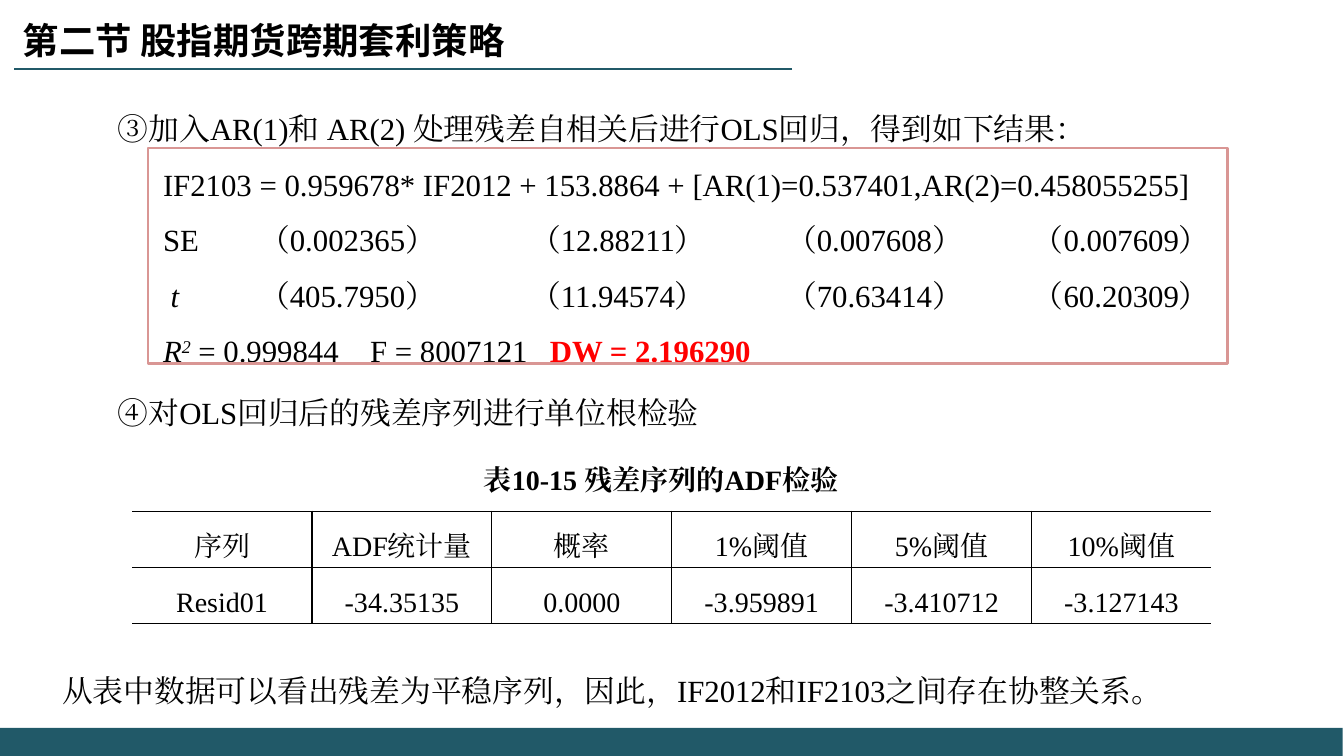
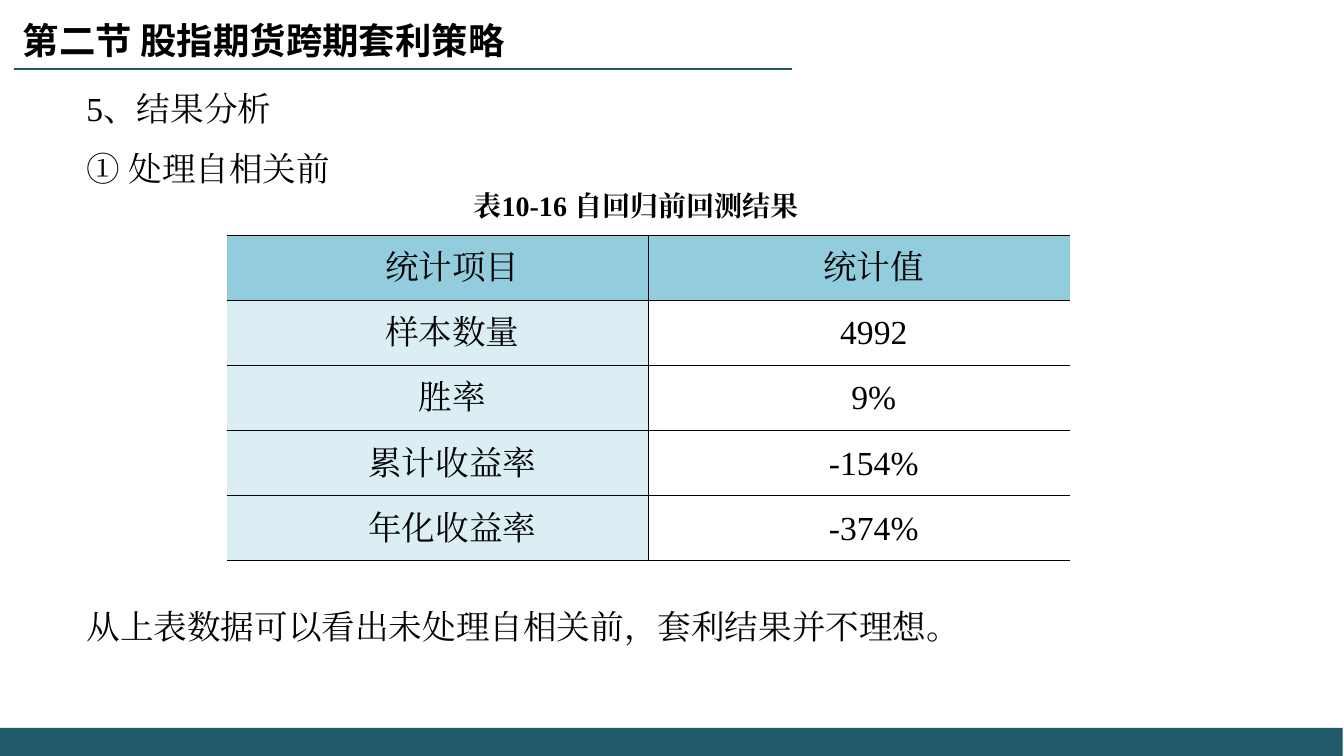
from lxml import etree
from pptx import Presentation
from pptx.dml.color import RGBColor
from pptx.enum.shapes import MSO_CONNECTOR, MSO_SHAPE
from pptx.enum.text import MSO_ANCHOR, PP_ALIGN
from pptx.oxml.ns import qn
from pptx.util import Cm, Pt

RECTANGLE, STRAIGHT = MSO_SHAPE.RECTANGLE, MSO_CONNECTOR.STRAIGHT
LEFT, CENTER, MIDDLE = PP_ALIGN.LEFT, PP_ALIGN.CENTER, MSO_ANCHOR.MIDDLE

BLACK = RGBColor(0x00, 0x00, 0x00)
RED = RGBColor(0xFF, 0x00, 0x00)
TEAL = RGBColor(0x21, 0x59, 0x68)
ROSE = RGBColor(0xD9, 0x96, 0x94)
HEADER_BLUE = RGBColor(0x93, 0xCD, 0xDD)
LABEL_BLUE = RGBColor(0xDB, 0xEE, 0xF4)

BODY_FONT = "Times New Roman"
TITLE_FONT = "Noto Sans CJK SC"
CAPTION_INDENT = Cm(0.74)

SECTION_TITLE = "第二节 股指期货跨期套利策略"

# Each line is a list of (text, style) runs; tabs lead to the coefficient columns.
COEFFICIENT_TABS = [2.42, 9.25, 15.7, 21.92]
FIT_TABS = [5.22, 9.75]
ITALIC = {"italic": True}
REGRESSION = [
    ([("IF2103 = 0.959678* IF2012 + 153.8864 + "
       "[AR(1)=0.537401,AR(2)=0.458055255]", {})], []),
    ([("SE\t（0.002365）\t（12.88211）\t（0.007608）\t（0.007609）", {})],
     COEFFICIENT_TABS),
    ([(" t", ITALIC), ("\t（405.7950）\t（11.94574）\t（70.63414）\t（60.20309）", {})],
     COEFFICIENT_TABS),
    ([("R", ITALIC), ("2", {"italic": True, "raised": True}),
      (" = 0.999844\tF = 8007121\t", {}),
      ("DW = 2.196290", {"bold": True, "color": RED})], FIT_TABS),
]
ADF_TEST = [
    ["序列", "ADF统计量", "概率", "1%阈值", "5%阈值", "10%阈值"],
    ["Resid01", "-34.35135", "0.0000", "-3.959891", "-3.410712", "-3.127143"],
]
BACKTEST = [
    ["统计项目", "统计值"],
    ["样本数量", "4992"],
    ["胜率", "9%"],
    ["累计收益率", "-154%"],
    ["年化收益率", "-374%"],
]


def format_run(run, size, font=BODY_FONT, bold=False, italic=False,
               color=BLACK, raised=False):
    run.font.size, run.font.name = Pt(size), font
    run.font.bold, run.font.italic = bold, italic
    run.font.color.rgb = color
    properties = run.font._element
    etree.SubElement(properties, qn("a:ea")).set("typeface", font)
    if raised:
        properties.set("baseline", "30000")


def write_line(paragraph, runs, size, spacing=None, align=LEFT, indent=0, tabs=()):
    """Fill one paragraph with (text, style) runs; tabs are in centimetres."""
    properties = paragraph._p.get_or_add_pPr()
    if tabs:
        tab_list = etree.SubElement(properties, qn("a:tabLst"))
        for position in tabs:
            etree.SubElement(tab_list, qn("a:tab"), pos=str(Cm(position)), algn="l")
    if indent:
        properties.set("marL", "0")
        properties.set("indent", str(indent))
    paragraph.alignment = align
    if spacing:
        paragraph.line_spacing = spacing
    for text, style in runs:
        run = paragraph.add_run()
        run.text = text
        format_run(run, size, **style)


def add_text(slide, left, top, width, height, lines, size, **layout):
    """Add a text box without margins from (runs, tabs) lines."""
    box = slide.shapes.add_textbox(Cm(left), Cm(top), Cm(width), Cm(height))
    frame = box.text_frame
    frame.word_wrap = True
    frame.margin_left = frame.margin_right = 0
    frame.margin_top = frame.margin_bottom = 0
    for number, (runs, tabs) in enumerate(lines):
        paragraph = frame.add_paragraph() if number else frame.paragraphs[0]
        write_line(paragraph, runs, size, tabs=tabs, **layout)


def add_body(slide, left, top, texts, size):
    add_text(slide, left, top, 30, 1.4 * len(texts),
             [([(text, {})], ()) for text in texts], size, spacing=1.5)


def add_caption(slide, left, top, text):
    add_text(slide, left, top, 13.08, 0.9, [([(text, {"bold": True})], ())], 20,
             align=CENTER, indent=CAPTION_INDENT)


def set_borders(cell, visible):
    """Draw the sides named in visible (of L, R, T, B) and blank the others."""
    properties = cell._tc.get_or_add_tcPr()
    for place, side in enumerate("LRTB"):
        line = etree.Element(qn("a:ln" + side), w=str(Pt(1)))
        if side in visible:
            fill = etree.SubElement(line, qn("a:solidFill"))
            etree.SubElement(fill, qn("a:srgbClr"), val=str(BLACK))
        else:
            etree.SubElement(line, qn("a:noFill"))
        properties.insert(place, line)


def add_grid(slide, left, top, width, row_height, rows, size, margins,
             header_fill=None, label_fill=None, **layout):
    """Add a table ruled everywhere but on its outer left and right sides."""
    columns = len(rows[0])
    table = slide.shapes.add_table(len(rows), columns, Cm(left), Cm(top), Cm(width),
                                   Cm(row_height * len(rows))).table
    table.first_row = table.horz_banding = False
    for row in table.rows:
        row.height = Cm(row_height)
    for r, values in enumerate(rows):
        for c, value in enumerate(values):
            cell = table.cell(r, c)
            cell.vertical_anchor = MIDDLE
            cell.margin_left = cell.margin_right = Cm(margins[0])
            cell.margin_top, cell.margin_bottom = Cm(margins[1]), 0
            fill = header_fill if r == 0 else label_fill if c == 0 else None
            if fill:
                cell.fill.solid()
                cell.fill.fore_color.rgb = fill
            else:
                cell.fill.background()
            set_borders(cell, "TB" + "L" * (c > 0) + "R" * (c < columns - 1))
            write_line(cell.text_frame.paragraphs[0], [(value, {})], size,
                       align=CENTER, **layout)


def add_rectangle(slide, left, top, width, height):
    rectangle = slide.shapes.add_shape(RECTANGLE, Cm(left), Cm(top),
                                       Cm(width), Cm(height))
    rectangle.shadow.inherit = False
    return rectangle


def add_section_slide(deck):
    """Add a slide with the footer band, the title and its rule."""
    slide = deck.slides.add_slide(deck.slide_layouts[6])
    band = add_rectangle(slide, 0, 18.34, 33.84, 0.71)
    band.fill.solid()
    band.fill.fore_color.rgb = TEAL
    band.line.fill.background()
    rule = slide.shapes.add_connector(STRAIGHT, Cm(19.96), Cm(1.73), Cm(0.36), Cm(1.73))
    rule.line.color.rgb = TEAL
    rule.line.width = Pt(1.5)
    etree.SubElement(rule._element.spPr, qn("a:effectLst"))
    add_text(slide, 0.58, 0.46, 15, 1.2,
             [([(SECTION_TITLE, {"font": TITLE_FONT, "bold": True})], ())], 26)
    return slide


def add_cointegration_slide(deck):
    slide = add_section_slide(deck)
    add_body(slide, 2.97, 2.31,
             ["③加入AR(1)和 AR(2) 处理残差自相关后进行OLS回归，得到如下结果："], 22)
    add_text(slide, 4.11, 3.71, 28, 5.6, REGRESSION, 22, spacing=1.5)
    frame = add_rectangle(slide, 3.73, 3.73, 27.2, 5.44)
    frame.fill.background()
    frame.line.color.rgb = ROSE
    frame.line.width = Pt(2)
    add_body(slide, 2.97, 9.45, ["④对OLS回归后的残差序列进行单位根检验"], 22)
    add_caption(slide, 9.75, 11.66, "表10-15 残差序列的ADF检验")
    add_grid(slide, 3.33, 12.88, 27.2, 1.42, ADF_TEST, 20, (0.18, 0), spacing=1.5)
    add_body(slide, 1.57, 16.45,
             ["从表中数据可以看出残差为平稳序列，因此，IF2012和IF2103之间存在协整关系。"], 22)


def add_backtest_slide(deck):
    slide = add_section_slide(deck)
    add_body(slide, 2.18, 1.7, ["5、结果分析", "① 处理自相关前"], 24)
    add_caption(slide, 9.12, 4.75, "表10-16 自回归前回测结果")
    add_grid(slide, 5.72, 5.93, 21.24, 1.64, BACKTEST, 24, (0.03, 0.03),
             HEADER_BLUE, LABEL_BLUE, indent=CAPTION_INDENT)
    add_body(slide, 2.18, 14.76,
             ["从上表数据可以看出未处理自相关前，套利结果并不理想。"], 24)


def main():
    deck = Presentation()
    deck.slide_width, deck.slide_height = Cm(33.87), Cm(19.05)
    add_cointegration_slide(deck)
    add_backtest_slide(deck)
    deck.save("out.pptx")


if __name__ == "__main__":
    main()
